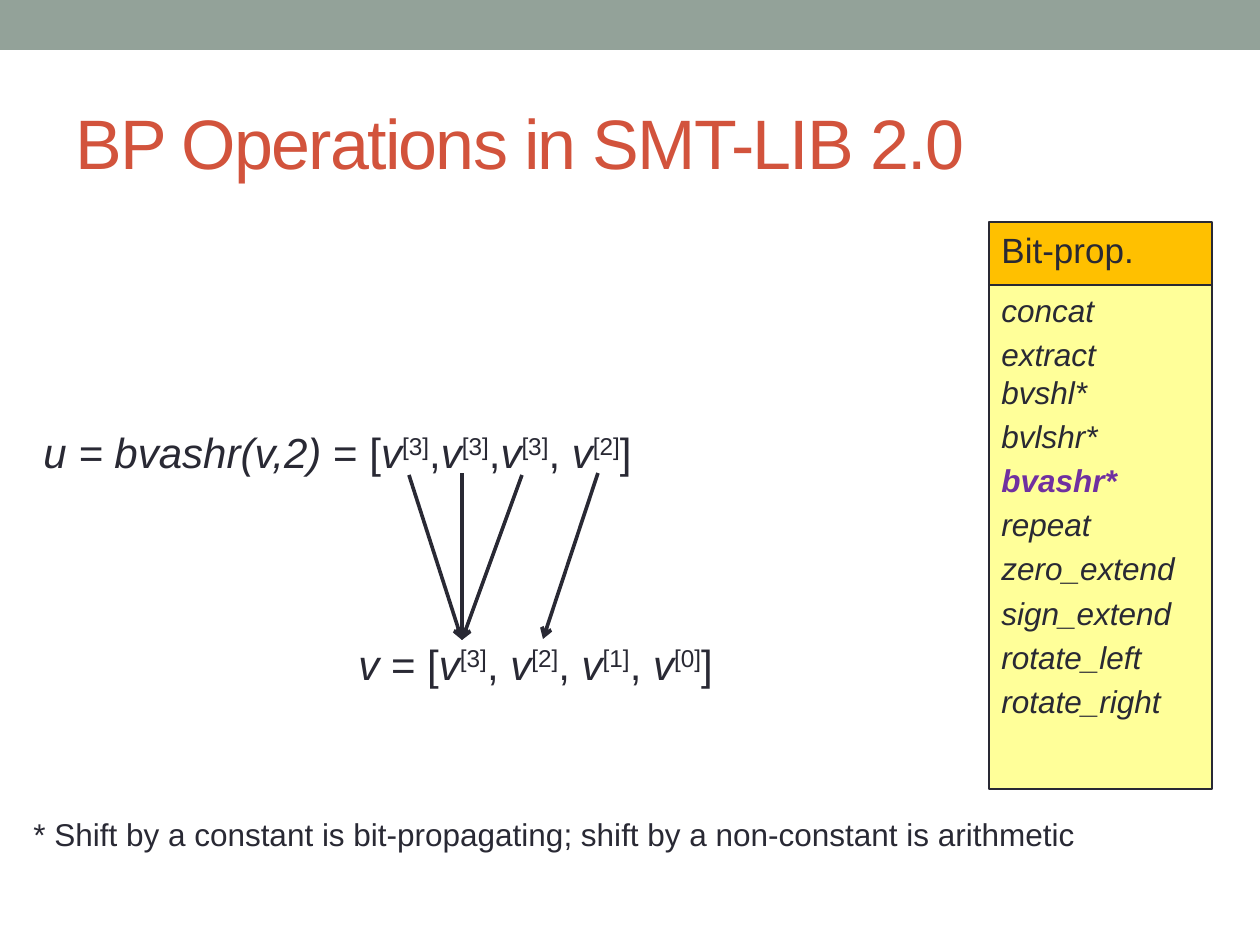
from lxml import etree
from pptx import Presentation, util as u
from pptx.dml.color import RGBColor
from pptx.enum import shapes, text
from pptx.oxml.ns import qn

SCALE = 914400 / 126
INK, RED, PURPLE = "292934", "D2533C", "7030A0"
BAND, AMBER, CREAM = "93A299", "FFC000", "FFFF99"


def px(length):
    return u.Emu(round(length * SCALE))


def color(value):
    return RGBColor.from_string(value)


def write(paragraph, words, ink=INK, raised=False, spacing=None, **formats):
    run = paragraph.add_run()
    run.text = words
    for name, value in {"name": "Arial", **formats}.items():
        setattr(run.font, name, value)
    run.font.color.rgb = color(ink)
    properties = run.font._element
    if raised:
        properties.set("baseline", "30000")
    if spacing is not None:
        properties.set("spc", str(spacing))


def add_textbox(slide, box, anchor=text.MSO_ANCHOR.TOP):
    frame = slide.shapes.add_textbox(*map(px, box)).text_frame
    for name, value in {"word_wrap": True, "vertical_anchor": anchor}.items():
        setattr(frame, name, value)
    return frame.paragraphs[0]


def add_panel(slide, box, fill, border=None):
    panel = slide.shapes.add_shape(shapes.MSO_SHAPE.RECTANGLE, *map(px, box))
    panel.shadow.inherit = False
    panel.fill.solid()
    panel.fill.fore_color.rgb = color(fill)
    if border:
        panel.line.color.rgb = color(border)
        panel.line.width = u.Pt(0.75)
    else:
        panel.line.fill.background()
    panel.text_frame.vertical_anchor = text.MSO_ANCHOR.TOP
    return panel.text_frame


def add_heading(slide, box):
    title = add_textbox(slide, box, text.MSO_ANCHOR.MIDDLE)
    write(title, "BP Operations in SMT-LIB 2.0", RED, spacing=-100, size=u.Pt(40))


def add_operations(slide, box, header_height):
    left, top, width, height = box
    header = add_panel(slide, (left, top, width, header_height), AMBER, INK)
    body = add_panel(slide, (left, top + header_height, width, height - header_height), CREAM, INK)
    operations = ["concat", "extract\vbvshl*", "bvlshr*", "bvashr*", "repeat",
                  "zero_extend", "sign_extend", "rotate_left", "rotate_right"]
    for frame, entries, size, italic in ((header, ["Bit-prop."], 20, False),
                                         (body, operations, 18, True)):
        frame.word_wrap = True
        for index, entry in enumerate(entries):
            paragraph = frame.add_paragraph() if index else frame.paragraphs[0]
            paragraph.alignment = text.PP_ALIGN.LEFT
            paragraph.space_before = u.Pt(size * 0.2)
            current = entry == "bvashr*"
            for part, words in enumerate(entry.split("\v")):
                if part:
                    paragraph.add_line_break()
                write(paragraph, words, PURPLE if current else INK,
                      size=u.Pt(size), italic=italic, bold=current)


def add_vector(slide, box, name, bits, separators):
    line = add_textbox(slide, box)
    size = u.Pt(24)
    write(line, name + " ", size=size, italic=True)
    write(line, "= [", size=size)
    for bit, separator in zip(bits, separators):
        write(line, "v", size=size, italic=True)
        write(line, f"[{bit}]", raised=True, size=size)
        write(line, separator, size=size)


def add_arrow(slide, tip, tail):
    arrow = slide.shapes.add_connector(shapes.MSO_CONNECTOR.STRAIGHT, *map(px, tip + tail))
    arrow.line.color.rgb = color(INK)
    arrow.line.width = u.Pt(2.08)
    etree.SubElement(arrow.line._get_or_add_ln(), qn("a:headEnd"), type="arrow")
    etree.SubElement(arrow._element.spPr, qn("a:effectLst"))


def add_shift_diagram(slide, box):
    left, top, width, height = box
    add_vector(slide, (left, top, 703, 63), "u = bvashr(v,2)", (3, 3, 3, 2), (",", ",", ", ", "]"))
    add_vector(slide, (left + 315, top + height - 63, width - 315, 63), "v",
               (3, 2, 1, 0), (", ", ", ", ", ", "]"))
    for tip, tail in (((431, 220), (378, 55)), ((431, 220), (431, 53)),
                      ((431, 220), (491, 55)), ((512, 219), (567, 53))):
        add_arrow(slide, (left + tip[0], top + tip[1]), (left + tail[0], top + tail[1]))


def add_footnote(slide, box):
    write(add_textbox(slide, box),
          "* Shift by a constant is bit-propagating; shift by a non-constant is arithmetic",
          size=u.Pt(18))


def main():
    deck = Presentation()
    deck.slide_width, deck.slide_height = px(1260), px(945)
    slide = deck.slides.add_slide(deck.slide_layouts[6])
    add_panel(slide, (0, 0, 1260, 50), BAND)
    add_heading(slide, (63, 73, 1134, 136))
    add_operations(slide, (989, 222, 223, 567), 63)
    add_shift_diagram(slide, (31, 420, 851, 275))
    add_footnote(slide, (21, 809, 1197, 50))
    deck.save("out.pptx")


if __name__ == "__main__":
    main()
